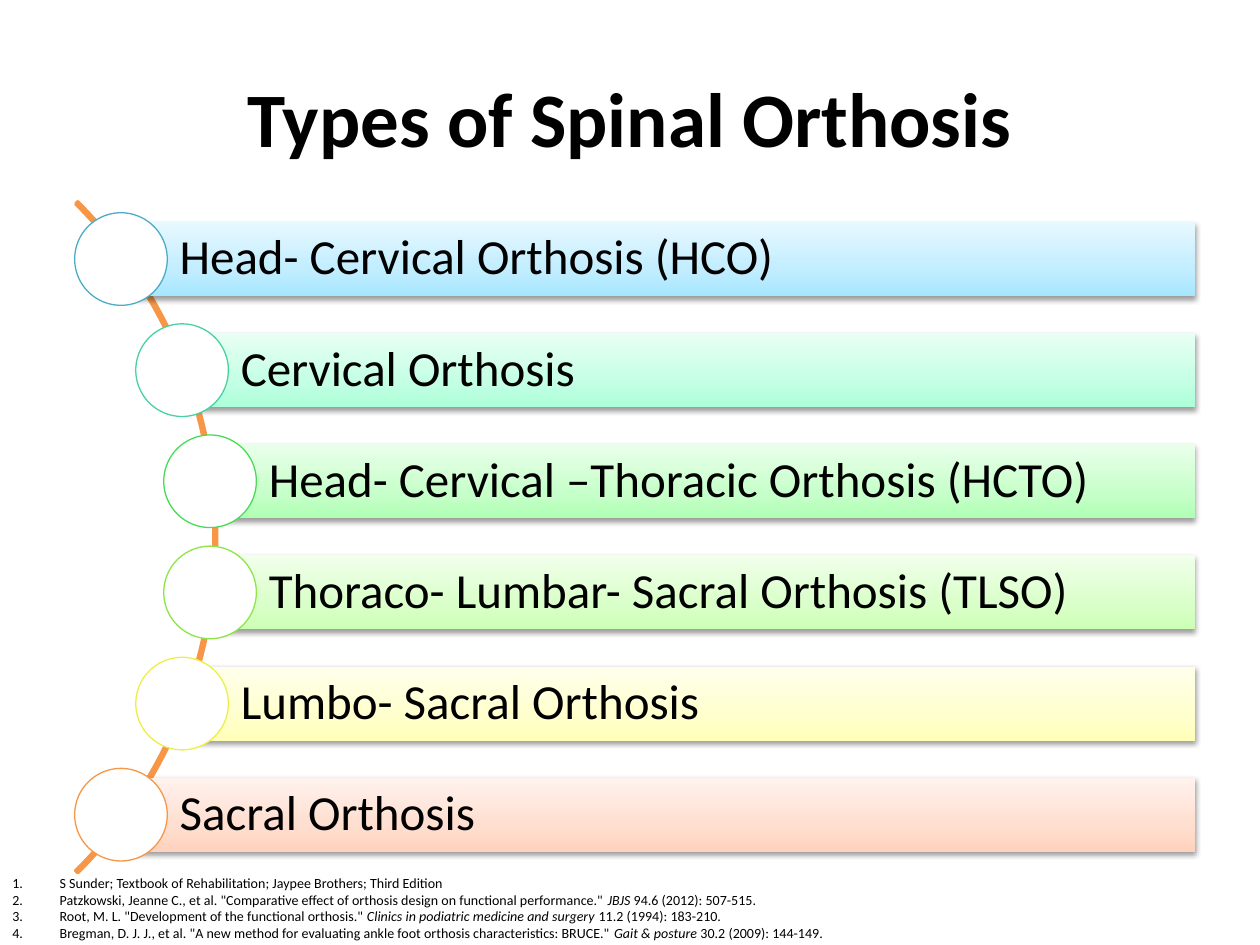
from dataclasses import dataclass

import lxml.etree
import pptx
import pptx.dml.color
import pptx.enum.shapes
import pptx.enum.text
import pptx.oxml.ns
import pptx.util


@dataclass(frozen=True)
class Theme:
    font: str = "Calibri"
    text: str = "000000"
    paper: str = "FFFFFF"
    arc: str = "F79646"
    title_size: int = 44
    label_size: int = 28
    reference_size: int = 8


THEME = Theme()
SLIDE_WIDTH, SLIDE_HEIGHT = pptx.util.Inches(10), pptx.util.Inches(7.5)

# The slide is a grid of 100 columns by 75 rows
COLUMN, ROW = SLIDE_WIDTH / 100, SLIDE_HEIGHT / 75
PITCH = 8.82
FIRST_CENTRE = 20.56
BAR_RIGHT, BAR_HEIGHT = 94.86, 5.88
CIRCLE = 7.35

# Label, centre column of the circle, circle outline, bar gradient from the bottom up
ORTHOSES = [
    ("Head- Cervical Orthosis (HCO)", 9.6, "4BACC6", ("A7E6FF", "C1EDFF", "E7F8FF")),
    ("Cervical Orthosis", 14.45, "49D1A3", ("ACFFD9", "C4FFE4", "E8FFF4")),
    ("Head- Cervical –Thoracic Orthosis (HCTO)", 16.67, "47DC57", ("B0FFB4", "C7FFCA", "EAFFEB")),
    ("Thoraco- Lumbar- Sacral Orthosis (TLSO)", 16.67, "8DE646", ("CCFFB4", "DAFFCA", "F1FFEB")),
    ("Lumbo- Sacral Orthosis", 14.45, "EEEF46", ("FFFFB9", "FFFFCD", "FFFFEC")),
    ("Sacral Orthosis", 9.6, "F79646", ("FFD2BD", "FFDED0", "FFF2ED")),
]

# Text before the journal, journal in italics, text after it
REFERENCES = [
    ("S Sunder; Textbook of Rehabilitation; Jaypee Brothers; Third Edition", "", ""),
    ('Patzkowski, Jeanne C., et al. "Comparative effect of orthosis design on functional performance." ',
     "JBJS", " 94.6 (2012): 507-515."),
    ('Root, M. L. "Development of the functional orthosis." ',
     "Clinics in podiatric medicine and surgery", " 11.2 (1994): 183-210."),
    ('Bregman, D. J. J., et al. "A new method for evaluating ankle foot orthosis characteristics: BRUCE." ',
     "Gait & posture", " 30.2 (2009): 144-149."),
]


def colour(value):
    return pptx.dml.color.RGBColor.from_string(value)


def place(left, top, width, height):
    return [round(length) for length in (left * COLUMN, top * ROW, width * COLUMN, height * ROW)]


def add_element(parent, tag, **attributes):
    return lxml.etree.SubElement(parent, pptx.oxml.ns.qn(tag), attributes)


def set_font(paragraph, size, bold=False):
    font = paragraph.font
    font.name, font.size, font.bold = THEME.font, pptx.util.Pt(size), bold
    font.color.rgb = colour(THEME.text)


def add_outline(slide, kind, position, line, width, fill=None):
    shape = slide.shapes.add_shape(kind, *position)
    shape.shadow.inherit = False
    if fill:
        shape.fill.solid()
        shape.fill.fore_color.rgb = colour(fill)
    else:
        shape.fill.background()
    shape.line.color.rgb = colour(line)
    shape.line.width = pptx.util.Pt(width)
    return shape


def set_gradient(shape, colours):
    shape.fill.gradient()
    shape.fill.gradient_angle = 90
    stops = shape._element.spPr.find(".//" + pptx.oxml.ns.qn("a:gsLst"))
    for stop in list(stops):
        stops.remove(stop)
    for position, value in zip((0, 35000, 100000), colours):
        stop = add_element(stops, "a:gs", pos=str(position))
        add_element(stop, "a:srgbClr", val=value)


def set_shadow(shape):
    shape.shadow.inherit = False
    effects = shape._element.spPr.find(pptx.oxml.ns.qn("a:effectLst"))
    shadow = add_element(effects, "a:outerShdw", blurRad="40000", dist="20000",
                         dir="5400000", rotWithShape="0")
    shade = add_element(shadow, "a:srgbClr", val="000000")
    add_element(shade, "a:alpha", val="38000")


def add_bar(slide, label, left, centre, colours):
    bar = slide.shapes.add_shape(
        pptx.enum.shapes.MSO_SHAPE.RECTANGLE,
        *place(left, centre - BAR_HEIGHT / 2, BAR_RIGHT - left, BAR_HEIGHT))
    set_gradient(bar, colours)
    bar.line.fill.background()
    set_shadow(bar)
    frame = bar.text_frame
    frame.word_wrap = True
    frame.vertical_anchor = pptx.enum.text.MSO_ANCHOR.MIDDLE
    frame.margin_left = round(4.67 * COLUMN)
    frame.margin_right = frame.margin_top = frame.margin_bottom = round(0.8 * COLUMN)
    paragraph = frame.paragraphs[0]
    paragraph.text = label
    paragraph.alignment = pptx.enum.text.PP_ALIGN.LEFT
    paragraph.line_spacing = 0.9
    set_font(paragraph, THEME.label_size)


def add_text_box(slide, position):
    frame = slide.shapes.add_textbox(*position).text_frame
    frame.word_wrap = True
    return frame


def add_title(slide, title):
    frame = add_text_box(slide, place(5, 3, 90, 12.5))
    frame.vertical_anchor = pptx.enum.text.MSO_ANCHOR.MIDDLE
    paragraph = frame.paragraphs[0]
    paragraph.text = title
    paragraph.alignment = pptx.enum.text.PP_ALIGN.CENTER
    set_font(paragraph, THEME.title_size, bold=True)


def add_references(slide, references):
    frame = add_text_box(slide, place(0, 68.9, 100, 6.4))
    frame.auto_size = pptx.enum.text.MSO_AUTO_SIZE.SHAPE_TO_FIT_TEXT
    indent = round(3.75 * COLUMN)
    for index, parts in enumerate(references):
        paragraph = frame.add_paragraph() if index else frame.paragraphs[0]
        properties = paragraph._p.get_or_add_pPr()
        properties.set("marL", str(indent))
        properties.set("indent", str(-indent))
        add_element(properties, "a:buFont", typeface="+mj-lt")
        add_element(properties, "a:buAutoNum", type="arabicPeriod")
        set_font(paragraph, THEME.reference_size)
        for part, italic in zip(parts, (False, True, False)):
            if part:
                run = paragraph.add_run()
                run.text = part
                run.font.italic = italic


def add_arc(slide):
    arc = add_outline(slide, pptx.enum.shapes.MSO_SHAPE.BLOCK_ARC,
                      place(-58.1, 5, 75.3, 75.3), THEME.arc, 2)
    # Start and end angle in units of 100000/60000 degrees, then the thickness
    for index, value in enumerate((189, 27, 0.003)):
        arc.adjustments[index] = value


def main():
    presentation = pptx.Presentation()
    presentation.slide_width, presentation.slide_height = SLIDE_WIDTH, SLIDE_HEIGHT
    slide = presentation.slides.add_slide(presentation.slide_layouts[6])

    # Curved list of orthosis types
    add_arc(slide)
    for index, (label, column, outline, colours) in enumerate(ORTHOSES):
        centre = FIRST_CENTRE + index * PITCH
        add_bar(slide, label, column, centre, colours)
        add_outline(slide, pptx.enum.shapes.MSO_SHAPE.OVAL,
                    place(column - CIRCLE / 2, centre - CIRCLE / 2, CIRCLE, CIRCLE),
                    outline, 0.75, THEME.paper)

    # Title and references
    add_title(slide, "Types of Spinal Orthosis")
    add_references(slide, REFERENCES)
    presentation.save("out.pptx")


if __name__ == "__main__":
    main()
